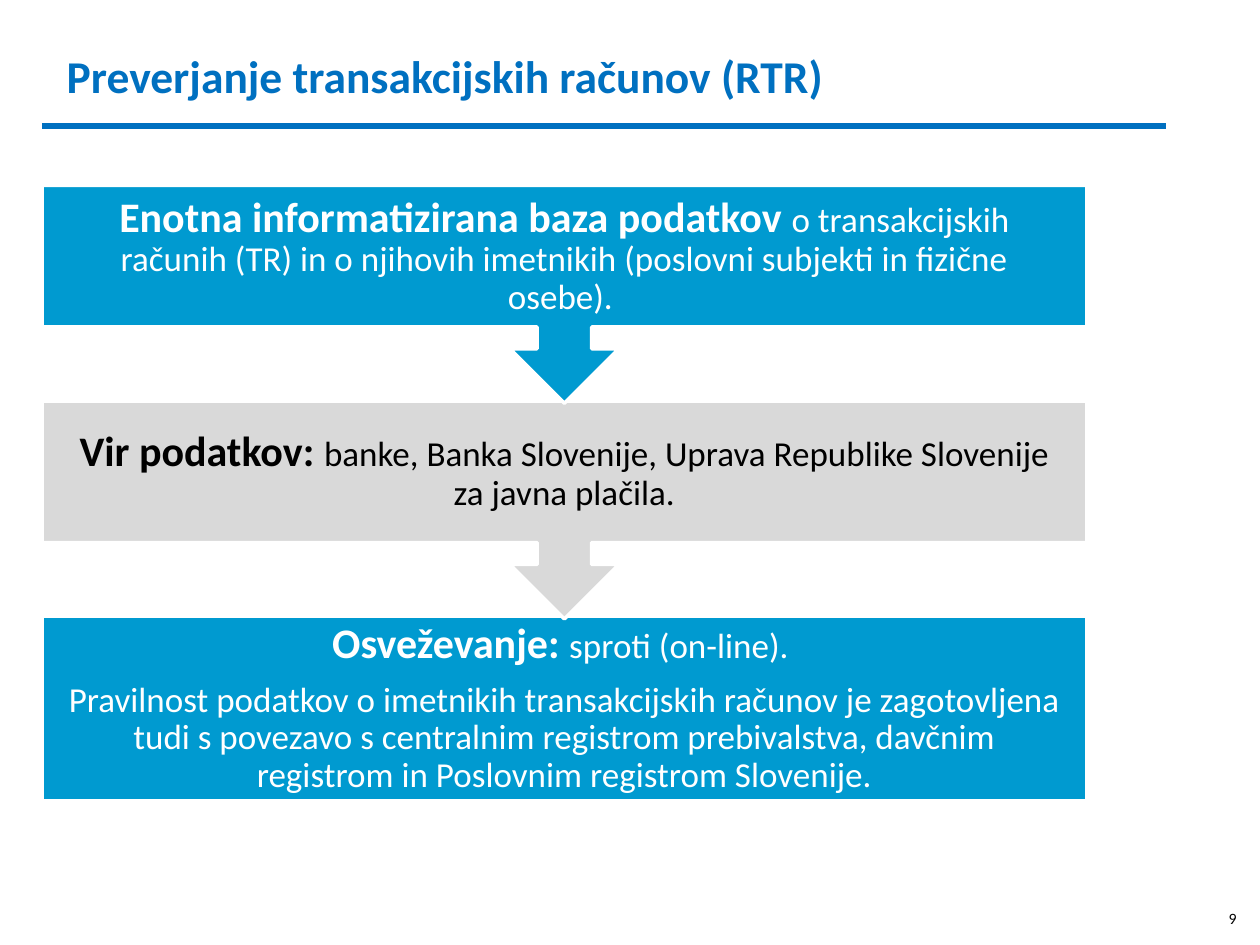
"""Build the slide on checking transaction accounts (RTR)."""
import pptx
import pptx.util
import pptx.dml.color
import pptx.enum.shapes
import pptx.enum.text
from lxml import etree

Pt = pptx.util.Pt
RGBColor = pptx.dml.color.RGBColor
SHAPE = pptx.enum.shapes.MSO_SHAPE
ANCHOR = pptx.enum.text.MSO_ANCHOR
CENTER = pptx.enum.text.PP_ALIGN.CENTER

TITLE_BLUE = RGBColor(0x00, 0x70, 0xC0)
STEP_BLUE = RGBColor(0x00, 0x9A, 0xD0)
STEP_GREY = RGBColor(0xD9, 0xD9, 0xD9)
WHITE = RGBColor(0xFF, 0xFF, 0xFF)
BLACK = RGBColor(0x00, 0x00, 0x00)


def set_font(font, size, color=None, bold=None):
    font.name = "Calibri"
    font.size = Pt(size)
    font.bold = bold
    if color is not None:
        font.color.rgb = color


def add_label(left, top, width, height, text, size, color, bold=None):
    frame = slide.shapes.add_textbox(Pt(left), Pt(top), Pt(width), Pt(height)).text_frame
    frame.word_wrap = True
    frame.text = text
    set_font(frame.paragraphs[0].font, size, color, bold)
    return frame


presentation = pptx.Presentation()
presentation.slide_width = Pt(720)
presentation.slide_height = Pt(540)
slide = presentation.slides.add_slide(presentation.slide_layouts[6])

title = add_label(31, 21, 618, 44, "Preverjanje transakcijskih računov (RTR)", 26, TITLE_BLUE, True)
title.vertical_anchor = ANCHOR.MIDDLE

STEP_LEFT, STEP_TOP, STEP_WIDTH, STEP_PITCH = 24, 106, 597, 123.2
steps = [
    (SHAPE.DOWN_ARROW_CALLOUT, 124.5, STEP_BLUE, WHITE, [
        ("Enotna informatizirana baza podatkov ",
         "o transakcijskih računih (TR) in o njihovih imetnikih (poslovni subjekti in fizične osebe). ")]),
    (SHAPE.DOWN_ARROW_CALLOUT, 124.5, STEP_GREY, BLACK, [
        ("Vir podatkov: ",
         "banke, Banka Slovenije, Uprava Republike Slovenije za javna plačila.")]),
    (SHAPE.RECTANGLE, 105, STEP_BLUE, WHITE, [
        ("Osveževanje: ", "sproti (on-line). "),
        ("", "Pravilnost podatkov o imetnikih transakcijskih računov je zagotovljena tudi s povezavo "
             "s centralnim registrom prebivalstva, davčnim registrom in Poslovnim registrom Slovenije.")]),
]
for index, (outline, height, fill, ink, lines) in reversed(list(enumerate(steps))):
    step = slide.shapes.add_shape(
        outline, Pt(STEP_LEFT), Pt(STEP_TOP + index * STEP_PITCH), Pt(STEP_WIDTH), Pt(height))
    step.shadow.inherit = False
    step.fill.solid()
    step.fill.fore_color.rgb = fill
    step.line.color.rgb = WHITE
    step.line.width = Pt(2)
    frame = step.text_frame
    frame.word_wrap = True
    frame.vertical_anchor = ANCHOR.MIDDLE
    frame.margin_left = frame.margin_right = Pt(13.5)
    frame.margin_top = frame.margin_bottom = Pt(13.5)
    for number, (heading, detail) in enumerate(lines):
        paragraph = frame.add_paragraph() if number else frame.paragraphs[0]
        paragraph.alignment = CENTER
        paragraph.line_spacing = 0.9
        if number < len(lines) - 1:
            paragraph.space_after = Pt(8.4)
        set_font(paragraph.font, 20, ink)
        for text, size, bold in ((heading, 24, True), (detail, 20, False)):
            if text:
                run = paragraph.add_run()
                run.text = text
                set_font(run.font, size, ink, bold)

title_rule = slide.shapes.add_connector(
    pptx.enum.shapes.MSO_CONNECTOR.STRAIGHT, Pt(24), Pt(72), Pt(666.5), Pt(72))
title_rule.line.color.rgb = TITLE_BLUE
title_rule.line.width = Pt(3)
etree.SubElement(title_rule.element.spPr, pptx.oxml.ns.qn("a:effectLst"))

add_label(695, 515.5, 25, 24.5, "9", 9, BLACK)

presentation.save("out.pptx")
